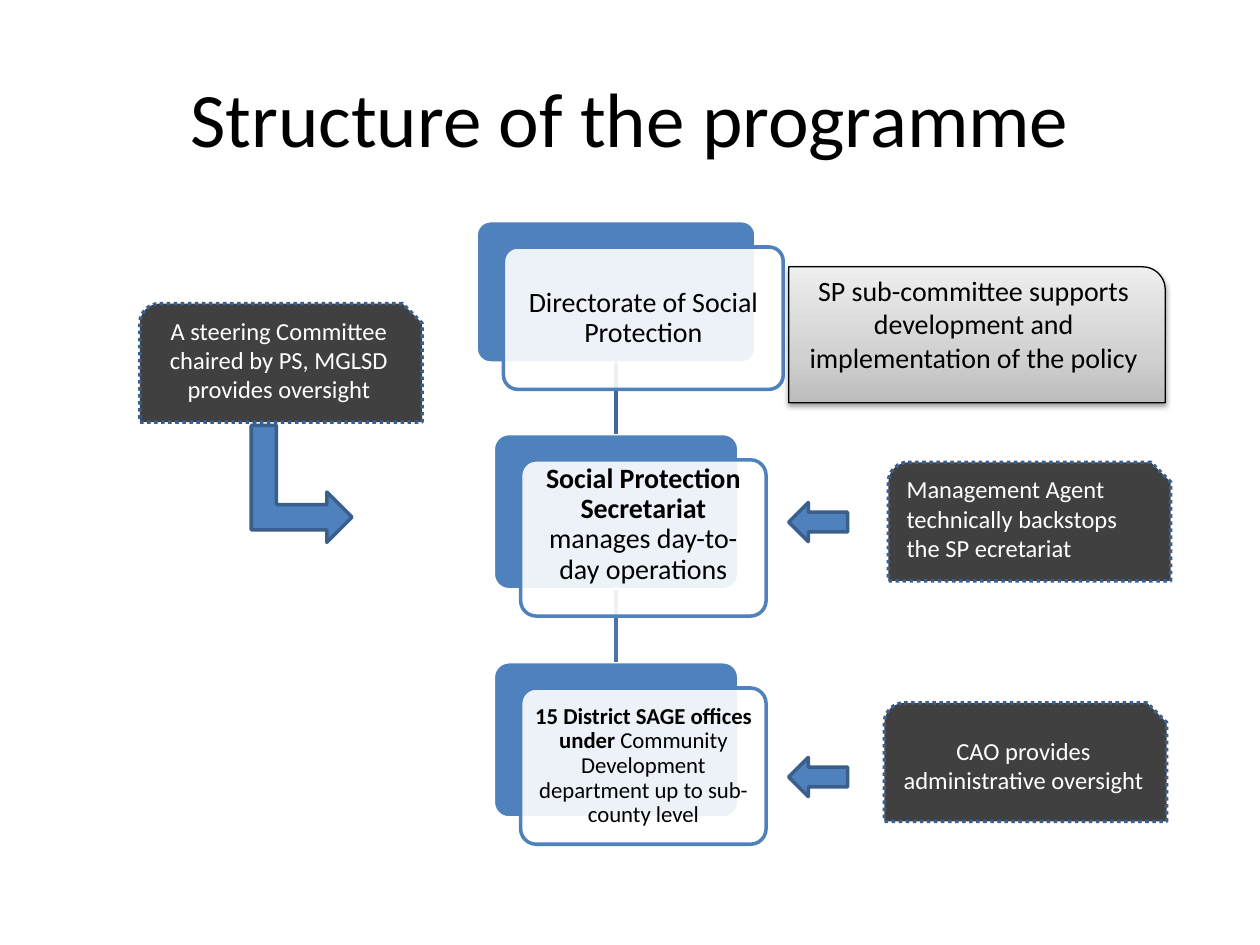
from dataclasses import dataclass

from lxml.etree import SubElement
from pptx import Presentation
from pptx.dml.color import RGBColor
from pptx.enum.dml import MSO_LINE
from pptx.enum.shapes import MSO_CONNECTOR, MSO_SHAPE
from pptx.enum.text import MSO_ANCHOR, PP_ALIGN
from pptx.oxml.ns import qn
from pptx.util import Cm, Pt


@dataclass(frozen=True)
class Theme:
    font: str = "Calibri"
    black: str = "000000"
    white: str = "FFFFFF"
    blue: str = "4F81BD"
    edge: str = "3A5F8C"
    dark: str = "404040"
    links: tuple = ("3F6797", "4875AC")
    fade: tuple = ((0, "BDBDBD"), (35, "D1D1D1"), (100, "EEEEEE"))
    title: int = 44
    large: int = 16
    note: int = 14
    small: int = 13


THEME = Theme()
MID = 12.42  # centre of the chain of tiers, in cm


def rgb(code):
    return RGBColor.from_string(code)


def node(root, tag, **attrs):
    return SubElement(root, qn(tag), {k: str(v) for k, v in attrs.items()})


def write(shape, text, *, lead="", size=THEME.large, color=THEME.black,
          align=PP_ALIGN.CENTER, anchor=MSO_ANCHOR.MIDDLE, space=None,
          inset=None, top=None):
    """Fill a shape with one paragraph, with an optional bold lead."""
    frame = shape.text_frame
    frame.word_wrap = True
    frame.vertical_anchor = anchor
    if inset is not None:
        frame.margin_left = frame.margin_right = Cm(inset)
        frame.margin_top = frame.margin_bottom = Cm(inset)
    if top is not None:
        frame.margin_top = Cm(top)
    para = frame.paragraphs[0]
    para.alignment = align
    para.line_spacing = space
    for part, bold in ((lead, True), (text, False)):
        if part:
            run = para.add_run()
            run.text = part
            run.font.name, run.font.size = THEME.font, Pt(size)
            run.font.bold, run.font.color.rgb = bold, rgb(color)


def label(slide, box, text, **style):
    write(slide.shapes.add_textbox(*map(Cm, box)), text, **style)


def block(slide, kind, box, fill, line, width=2):
    shape = slide.shapes.add_shape(kind, *map(Cm, box))
    shape.shadow.inherit = False
    shape.fill.solid()
    shape.fill.fore_color.rgb = rgb(fill)
    shape.line.color.rgb = rgb(line)
    shape.line.width = Pt(width)
    return shape


def card(slide, box, fill, line):
    shape = block(slide, MSO_SHAPE.ROUNDED_RECTANGLE, box, fill, line)
    shape.adjustments[0] = 0.1
    return shape


def front(slide, box, text, **style):
    """Translucent card, set off from its back card, with its text."""
    left, top, wide, high = box
    left, top = left + 0.55, top + 0.53
    shape = card(slide, (left, top, wide, high), THEME.white, THEME.blue)
    tint = shape.fill._xPr.find(".//" + qn("a:srgbClr"))
    node(tint, "a:alpha", val=90000)
    pad = 0.09
    inner = (left + pad, top + pad, wide - 2 * pad, high - 2 * pad)
    label(slide, inner, text, space=0.9, **style)


def link(slide, start, end, color):
    line = slide.shapes.add_connector(MSO_CONNECTOR.STRAIGHT, 0, 0, 0, 0)
    line.begin_connect(start, 2)
    line.end_connect(end, 0)
    line.line.color.rgb = rgb(color)
    line.line.width = Pt(2)
    node(line._element.spPr, "a:effectLst")


def note(slide, left, top, text, **style):
    shape = block(slide, MSO_SHAPE.SNIP_ROUND_RECTANGLE,
                  (left, top, 5.69, 2.39), THEME.dark, THEME.edge)
    shape.line.dash_style = MSO_LINE.ROUND_DOT
    write(shape, text, size=THEME.note, color=THEME.white, **style)


def arrow(slide, kind, box, turn=0):
    block(slide, kind, box, THEME.blue, THEME.edge).rotation = turn


def panel(slide, box, text):
    """Grey gradient panel with a soft shadow."""
    shape = block(slide, MSO_SHAPE.ROUND_1_RECTANGLE, box,
                  THEME.white, THEME.black, 0.75)
    shape.fill.gradient()
    shape.fill.gradient_angle = 90
    props = shape._element.spPr
    stops = props.find(".//" + qn("a:gsLst"))
    stops.clear()
    for spot, color in THEME.fade:
        stop = node(stops, "a:gs", pos=spot * 1000)
        node(stop, "a:srgbClr", val=color)
    cast = node(props.find(qn("a:effectLst")), "a:outerShdw", blurRad=Pt(3.1),
                dist=Pt(1.6), dir=5400000, rotWithShape=0)
    node(node(cast, "a:srgbClr", val=THEME.black), "a:alpha", val=38000)
    write(shape, text, anchor=MSO_ANCHOR.TOP)


def chain(slide):
    """Three tiers: back cards, links, then front cards."""
    sizes = ((4.45, 5.64, 2.87), (8.74, 4.95, 3.15), (13.34, 4.95, 3.15))
    boxes = [(MID - wide / 2, top, wide, high) for top, wide, high in sizes]
    backs = [card(slide, box, THEME.blue, THEME.white) for box in boxes]
    for start, end, color in zip(backs, backs[1:], THEME.links):
        link(slide, start, end, color)
    front(slide, boxes[0], "Directorate of Social Protection", inset=0.18)
    front(slide, boxes[1], "manages day-to-day operations",
          lead="Social Protection Secretariat ", inset=0.18, top=0,
          anchor=MSO_ANCHOR.TOP)
    front(slide, boxes[2],
          "Community Development department up to sub-county level",
          lead="15 District SAGE offices under ", size=THEME.small, inset=0.13)


def main():
    deck = Presentation()
    deck.slide_width, deck.slide_height = Cm(25.4), Cm(19.05)
    slide = deck.slides.add_slide(deck.slide_layouts[6])

    # Title and central chain
    label(slide, (1.27, 0.76, 22.86, 3.18), "Structure of the programme",
          size=THEME.title)
    chain(slide)

    # Notes on the bodies that oversee or support
    note(slide, 2.82, 6.12,
         "A steering Committee chaired by PS, MGLSD provides oversight",
         anchor=MSO_ANCHOR.TOP)
    note(slide, 17.91, 9.32,
         "Management Agent technically backstops the SP ecretariat",
         anchor=MSO_ANCHOR.TOP, align=PP_ALIGN.LEFT)
    note(slide, 17.83, 14.17, "CAO provides administrative oversight")

    # Arrows towards the chain
    for top in (10.13, 15.27):
        arrow(slide, MSO_SHAPE.LEFT_ARROW, (15.9, top, 1.19, 0.79))
    arrow(slide, MSO_SHAPE.BENT_UP_ARROW, (4.9, 8.74, 2.36, 2.03), 90)

    # Policy panel
    panel(slide, (15.9, 5.38, 7.59, 2.74),
          "SP sub-committee supports development and implementation "
          "of the policy")

    deck.save("out.pptx")


if __name__ == "__main__":
    main()
